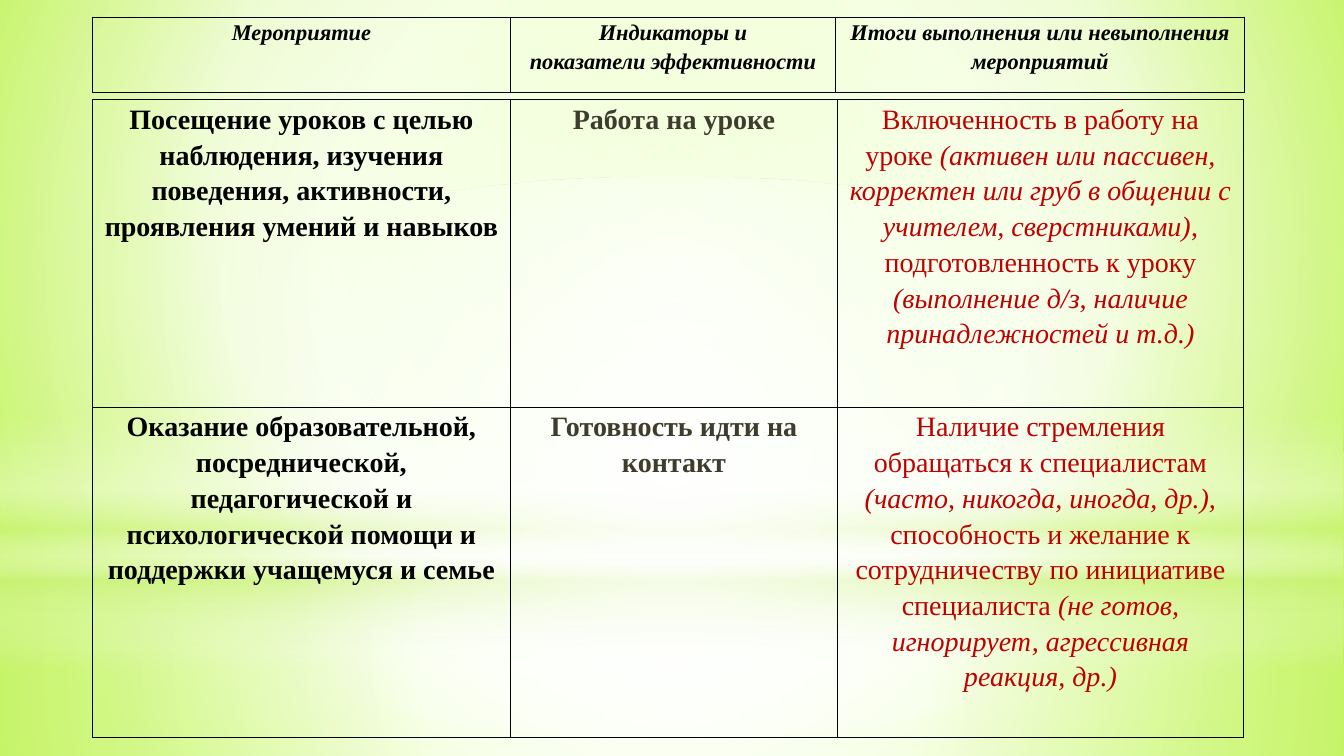
from lxml import etree
from pptx import Presentation
from pptx.dml.color import RGBColor
from pptx.enum.shapes import MSO_SHAPE
from pptx.enum.text import PP_ALIGN
from pptx.oxml import parse_xml
from pptx.oxml.ns import nsdecls, qn
from pptx.util import Inches, Pt

RECT, OVAL = MSO_SHAPE.RECTANGLE, MSO_SHAPE.OVAL
CENTER = PP_ALIGN.CENTER
FONT = "Times New Roman"
BLACK, OLIVE, RED = "000000", "3E3D2D", "C00000"
WHITE, LIME = "FFFFFF", "CAF278"
SLIDE_W, SLIDE_H = 13.33, 7.5
TABLE_LEFT = 0.92

BACKDROP = ([(0, "CAFF60", 100), (60, "F7FFE7", 100), (100, "B7FF29", 100)], (20, 10, 20, 60))
MIDDLE = (50, 50, 50, 50)
GLOWS = [
    (RECT, 5.58, 1.92, [(0, WHITE, 91), (37, WHITE, 76), (100, LIME, 79)], MIDDLE),
    (RECT, 0, 5.58, [(0, WHITE, 89), (48, WHITE, 62), (100, LIME, 79)], MIDDLE),
    (RECT, 4.12, 2.5, [(0, WHITE, 0), (29, WHITE, 30), (45, LIME, 40),
                       (55, WHITE, 26), (65, LIME, 60), (100, WHITE, 0)], None),
    (OVAL, 1.75, 5.58, [(0, WHITE, 100), (56, WHITE, 0)], MIDDLE),
]

HEADINGS = [[
    [["Мероприятие"]],
    [["Индикаторы и"], ["показатели эффективности"]],
    [["Итоги выполнения или невыполнения мероприятий"]],
]]
ACTIVITIES = [
    [
        [["Посещение уроков с целью наблюдения, изучения поведения, активности, "
          "проявления умений и навыков"]],
        [["Работа на уроке"]],
        [["Включенность в работу на уроке ",
          "(активен или пассивен, корректен или груб в общении с учителем, сверстниками)",
          ", подготовленность к уроку ",
          "(выполнение д/з, наличие принадлежностей и т.д.)"]],
    ],
    [
        [["Оказание образовательной, посреднической, педагогической и психологической "
          "помощи и поддержки учащемуся и семье"]],
        [["Готовность идти на контакт"]],
        [["Наличие стремления обращаться к специалистам ",
          "(часто, никогда, иногда, др.), ",
          "способность и желание к сотрудничеству по инициативе специалиста ",
          "(не готов, игнорирует, агрессивная реакция, др.)"]],
    ],
]
HEADING_STYLES = [(BLACK, True, True)] * 3
ACTIVITY_STYLES = [(BLACK, True, False), (OLIVE, True, False), (RED, False, False)]


def color(value):
    return RGBColor.from_string(value)


def gradient(stops, focus):
    marks = "".join(
        f'<a:gs pos="{pos * 1000}"><a:srgbClr val="{value}">'
        f'<a:alpha val="{alpha * 1000}"/></a:srgbClr></a:gs>'
        for pos, value, alpha in stops)
    if focus:
        sides = " ".join(f'{side}="{part * 1000}"' for side, part in zip("ltrb", focus))
        direction = f'<a:path path="circle"><a:fillToRect {sides}/></a:path>'
    else:
        direction = '<a:lin ang="5400000" scaled="0"/>'
    return parse_xml(f'<a:gradFill {nsdecls("a")} rotWithShape="1">'
                     f'<a:gsLst>{marks}</a:gsLst>{direction}</a:gradFill>')


def paint_background(slide):
    background = parse_xml(f'<p:bg {nsdecls("p", "a")}><p:bgPr><a:effectLst/></p:bgPr></p:bg>')
    background[0].insert(0, gradient(*BACKDROP))
    slide.element.find(qn("p:cSld")).insert(0, background)


def add_glow(slide, kind, top, height, stops, focus):
    glow = slide.shapes.add_shape(kind, 0, Inches(top), Inches(SLIDE_W), Inches(height))
    glow.shadow.inherit = False
    glow.line.fill.background()
    glow.fill.background()
    properties = glow.element.spPr
    properties.replace(properties.find(qn("a:noFill")), gradient(stops, focus))


def draw_borders(cell):
    properties = cell._tc.get_or_add_tcPr()
    for index, side in enumerate("LRTB"):
        border = etree.Element(qn(f"a:ln{side}"), w=str(Pt(1)))
        fill = etree.SubElement(border, qn("a:solidFill"))
        etree.SubElement(fill, qn("a:srgbClr"), val=BLACK)
        properties.insert(index, border)


def write_cell(cell, paragraphs, size, style, inset):
    value, bold, italic = style
    cell.margin_left = cell.margin_right = Inches(inset)
    cell.margin_top = cell.margin_bottom = 0
    cell.fill.background()
    draw_borders(cell)
    frame = cell.text_frame
    frame.text = "\n".join(parts[0] for parts in paragraphs)
    for paragraph, parts in zip(frame.paragraphs, paragraphs):
        paragraph.alignment = CENTER
        paragraph.line_spacing = 1.15
        for part in parts[1:]:
            paragraph.add_run().text = part
        for index, run in enumerate(paragraph.runs):
            font = run.font
            font.name, font.size = FONT, Pt(size)
            font.bold, font.italic = bold, italic or index % 2 == 1
            font.color.rgb = color(value)


def add_grid(slide, rows, top, widths, heights, size, styles, inset):
    table = slide.shapes.add_table(
        len(rows), len(widths), Inches(TABLE_LEFT), Inches(top),
        Inches(sum(widths)), Inches(sum(heights))).table
    table.first_row = table.horz_banding = False
    for column, width in zip(table.columns, widths):
        column.width = Inches(width)
    for row, height, contents in zip(table.rows, heights, rows):
        row.height = Inches(height)
        for cell, paragraphs, style in zip(row.cells, contents, styles):
            write_cell(cell, paragraphs, size, style, inset)


def main():
    deck = Presentation()
    deck.slide_width, deck.slide_height = Inches(SLIDE_W), Inches(SLIDE_H)
    slide = deck.slides.add_slide(deck.slide_layouts[6])
    paint_background(slide)
    for glow in GLOWS:
        add_glow(slide, *glow)
    add_grid(slide, ACTIVITIES, 0.99, (4.14, 3.25, 4.02), (3.05, 3.28), 20, ACTIVITY_STYLES, 0.07)
    add_grid(slide, HEADINGS, 0.17, (4.14, 3.23, 4.05), (0.75,), 16, HEADING_STYLES, 0.04)
    deck.save("out.pptx")


if __name__ == "__main__":
    main()
